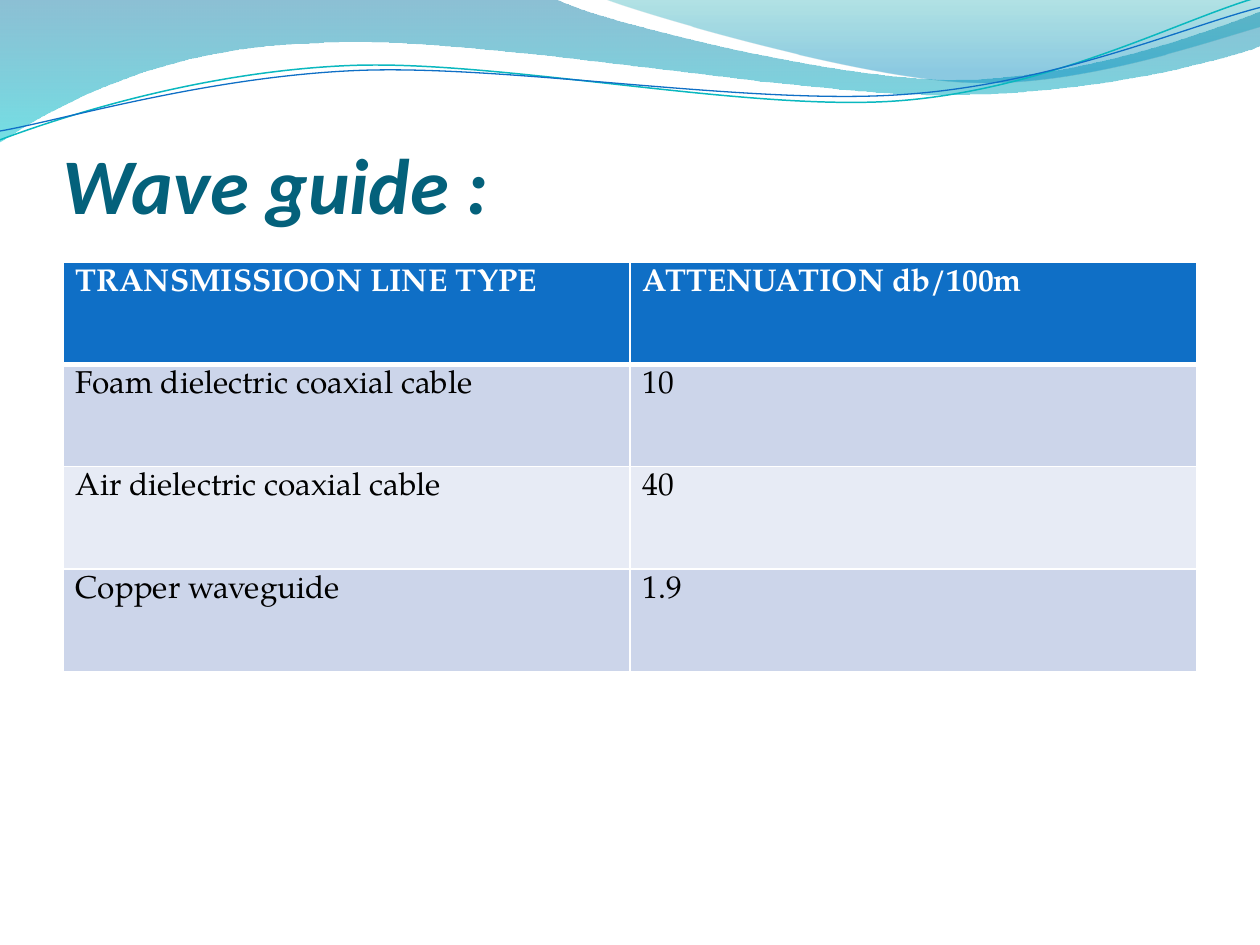
from math import cos, radians, sin
from typing import NamedTuple

from lxml.etree import SubElement
from pptx import Presentation
from pptx.dml.color import RGBColor
from pptx.enum.text import MSO_ANCHOR
from pptx.oxml import parse_xml
from pptx.oxml.ns import nsdecls, qn
from pptx.util import Inches, Pt

WAVE_TILT = 2.7
WHITE, BLACK, BLUE = "FFFFFF", "000000", "0F6FC6"
BODY_FONT = "TeX Gyre Pagella"
BANDS = ("CCD5EA", "E7EBF5")


class Stop(NamedTuple):
    position: float
    color: str
    opacity: int


class Ribbon(NamedTuple):
    outline: list
    stops: tuple[Stop, Stop]


class Wave(NamedTuple):
    outline: list
    center: tuple[float, float]
    color: str
    width: float


# An outline holds points (x, y) and cubic curves (x1, y1, x2, y2, x, y) in inches.
RIBBONS = [
    Ribbon([(0, 0), (4.4, -0.01), (4.76, 0.17, 6.64, 0.63, 7.58, 0.63),
            (8.53, 0.63, 9.58, 0.26, 10, 0.09), (10.01, 0.36),
            (9.83, 0.44, 8.7, 0.76, 7.46, 0.75), (6.22, 0.75, 3.82, 0.28, 2.57, 0.34),
            (1.29, 0.36, 0.46, 0.83, -0.01, 1.13), (0, 0)],
           (Stop(0, "0074A1", 45), Stop(1, "00C6CF", 55))),
    Ribbon([(4.79, -0.01), (5.09, 0.11, 6.82, 0.62, 7.69, 0.65),
            (8.56, 0.69, 9.61, 0.32, 10, 0.21), (10, 0), (4.79, -0.01)],
           (Stop(0, "00A1A9", 30), Stop(0.8, "008BBF", 45))),
]
WAVES = [
    Wave([(0, 1.11), (0.48, 0.93, 1.58, 0.57, 2.77, 0.52),
          (3.95, 0.47, 5.93, 0.89, 7.13, 0.8), (8.33, 0.71, 9.38, 0.15, 9.98, -0.02)],
         (4.99, 0.58), "0AB8BF", 0.85),
    Wave([(0, 1.04), (0.47, 0.96, 1.64, 0.61, 2.83, 0.56),
          (4.03, 0.51, 5.97, 0.84, 7.17, 0.75), (8.36, 0.67, 9.41, 0.21, 10, 0.06)],
         (5, 0.59), BLUE, 0.75),
]
ROWS = [
    ("TRANSMISSIOON LINE TYPE", "ATTENUATION db/100m"),
    ("Foam dielectric coaxial cable", "10"),
    ("Air dielectric coaxial cable", "40"),
    ("Copper waveguide", "1.9"),
]


def rgb(color: str) -> RGBColor:
    return RGBColor.from_string(color)


def pairs(segment: tuple) -> list[tuple[float, float]]:
    return list(zip(segment[::2], segment[1::2]))


def turn(segment: tuple, center: tuple[float, float], degrees: float) -> tuple:
    """Rotate every point of a segment clockwise about a center."""
    cx, cy = center
    c, s = cos(radians(degrees)), sin(radians(degrees))
    turned = []
    for x, y in pairs(segment):
        dx, dy = x - cx, y - cy
        turned += [cx + dx * c - dy * s, cy + dx * s + dy * c]
    return tuple(turned)


def add_outline(s, outline: list, close: bool):
    """Build a freeform through all points, then join control points into curves."""
    start, *rest = [(Inches(x), Inches(y)) for seg in outline for x, y in pairs(seg)]
    builder = s.shapes.build_freeform(*start)
    builder.add_line_segments(rest, close=close)
    sp = builder.convert_to_shape()
    sp.shadow.inherit = False
    lines = iter(sp._element.xpath(".//a:lnTo"))
    for segment in outline[1:]:
        first, *others = [next(lines) for _ in pairs(segment)]
        if others:
            curve = parse_xml(f'<a:cubicBezTo {nsdecls("a")}/>')
            first.addprevious(curve)
            for line in (first, *others):
                curve.append(line[0])
                line.getparent().remove(line)
    return sp


def add_ribbon(s, ribbon: Ribbon) -> None:
    sp = add_outline(s, ribbon.outline, close=True)
    sp.line.fill.background()
    sp.fill.gradient()
    sp.fill.gradient_angle = 270
    for gradient_stop, stop in zip(sp.fill.gradient_stops, ribbon.stops):
        gradient_stop.position = stop.position
        gradient_stop.color.rgb = rgb(stop.color)
    for color, stop in zip(sp._element.xpath(".//a:gs/a:srgbClr"), ribbon.stops):
        SubElement(color, qn("a:alpha")).set("val", str(stop.opacity * 1000))


def add_wave(s, wave: Wave) -> None:
    level = [turn(segment, wave.center, WAVE_TILT) for segment in wave.outline]
    sp = add_outline(s, level, close=False)
    sp.rotation = -WAVE_TILT
    sp.fill.background()
    sp.line.color.rgb = rgb(wave.color)
    sp.line.width = Pt(wave.width)


def write(tf, text: str, *, size: float, font: str, color: str,
          bold: bool = False, italic: bool = False) -> None:
    r = tf.paragraphs[0].add_run()
    r.text = text
    r.font.size, r.font.name = Pt(size), font
    r.font.bold, r.font.italic = bold, italic
    r.font.color.rgb = rgb(color)


def set_borders(cell, **widths: float) -> None:
    """Draw white borders; widths are points by side, in the order L, R, T, B."""
    tc_pr = cell._tc.get_or_add_tcPr()
    for index, (side, width) in enumerate(widths.items()):
        tc_pr.insert(index, parse_xml(
            f'<a:ln{side} {nsdecls("a")} w="{Pt(width)}"><a:solidFill>'
            f'<a:srgbClr val="{WHITE}"/></a:solidFill></a:ln{side}>'))


def add_title(s, text: str) -> None:
    tf = s.shapes.add_textbox(Inches(0.5), Inches(1.08), Inches(9), Inches(0.75)).text_frame
    tf.word_wrap = True
    tf.vertical_anchor = MSO_ANCHOR.BOTTOM
    tf.margin_left = tf.margin_right = tf.margin_bottom = 0
    tf.margin_top = Inches(0.05)
    write(tf, text, size=45, font="Calibri", color="04617B", bold=True, italic=True)


def add_attenuation_table(s) -> None:
    table = s.shapes.add_table(len(ROWS), len(ROWS[0]), Inches(0.5), Inches(2.08),
                               Inches(9), Inches(3.25)).table
    for i, row in enumerate(ROWS):
        header = i == 0
        for j, text in enumerate(row):
            cell = table.cell(i, j)
            cell.fill.solid()
            cell.fill.fore_color.rgb = rgb(BLUE if header else BANDS[(i - 1) % 2])
            set_borders(cell, L=1, R=1, T=1, B=3 if header else 1)
            write(cell.text_frame, text, size=18, font=BODY_FONT,
                  color=WHITE if header else BLACK, bold=header)


def main() -> None:
    prs = Presentation()
    prs.slide_width, prs.slide_height = Inches(10), Inches(7.5)
    s = prs.slides.add_slide(prs.slide_layouts[6])
    for ribbon in RIBBONS:
        add_ribbon(s, ribbon)
    for wave in WAVES:
        add_wave(s, wave)
    add_title(s, "Wave guide :")
    add_attenuation_table(s)
    prs.save("out.pptx")


if __name__ == "__main__":
    main()
